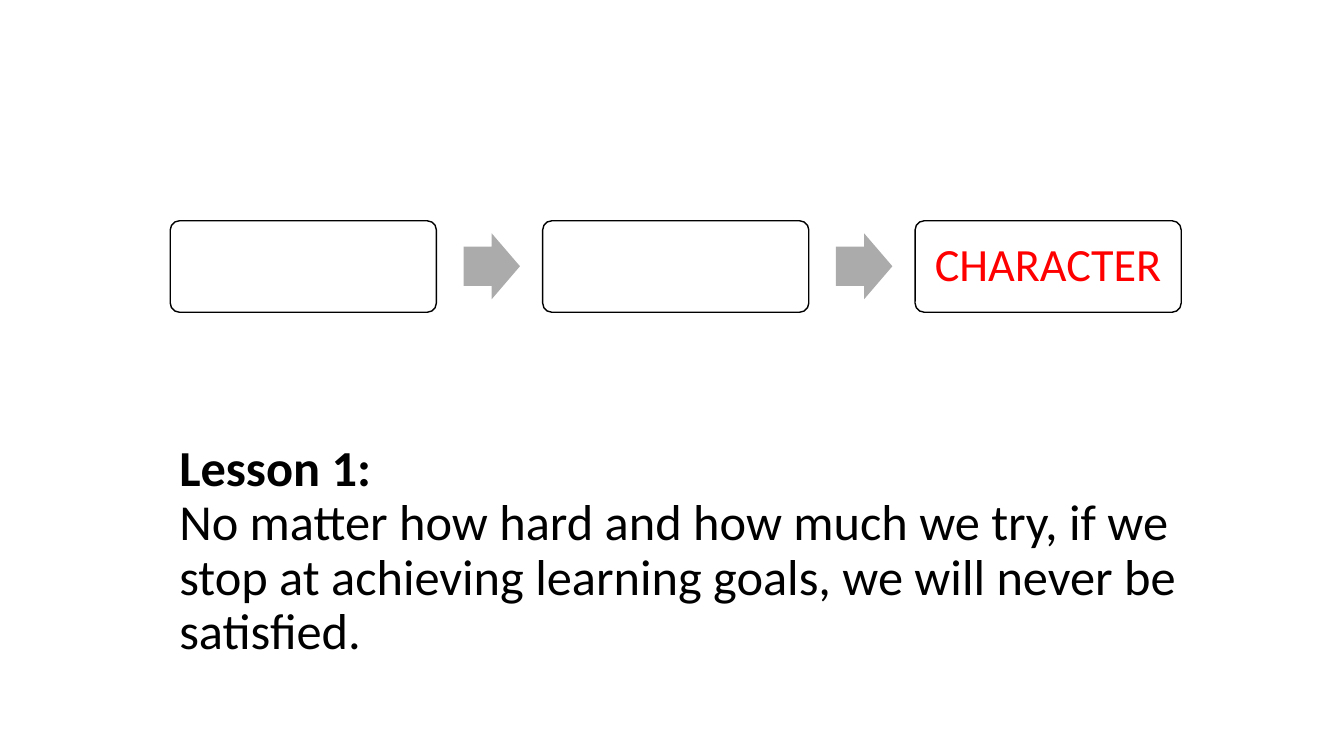
from pptx import Presentation
from pptx.dml.color import RGBColor
from pptx.enum.shapes import MSO_SHAPE
from pptx.enum.text import MSO_ANCHOR, PP_ALIGN
from pptx.util import Inches, Pt

BLACK = RGBColor(0x00, 0x00, 0x00)
WHITE = RGBColor(0xFF, 0xFF, 0xFF)
RED = RGBColor(0xFF, 0x00, 0x00)
GRAY = RGBColor(0xAB, 0xAB, 0xAB)


class LessonSlide:
    font_name = "Calibri"
    line_spacing = 0.9
    columns = 100
    rows = 100

    def __init__(self, presentation):
        self.slide = presentation.slides.add_slide(presentation.slide_layouts[6])
        self.column = presentation.slide_width / self.columns
        self.row = presentation.slide_height / self.rows

    def place(self, left, top, width, height):
        return (round(left * self.column), round(top * self.row),
                round(width * self.column), round(height * self.row))

    def set_text(self, shape, text, size, color, alignment):
        text_frame = shape.text_frame
        text_frame.word_wrap = True
        text_frame.vertical_anchor = MSO_ANCHOR.MIDDLE
        paragraph = text_frame.paragraphs[0]
        paragraph.text = text
        paragraph.alignment = alignment
        paragraph.line_spacing = self.line_spacing
        for run in paragraph.runs:
            run.font.name = self.font_name
            run.font.size = Pt(size)
            run.font.color.rgb = color
        return paragraph

    def shape(self, kind, area, fill, adjustments):
        shape = self.slide.shapes.add_shape(kind, *self.place(*area))
        shape.shadow.inherit = False
        shape.fill.solid()
        shape.fill.fore_color.rgb = fill
        for index, value in enumerate(adjustments):
            shape.adjustments[index] = value
        return shape

    def step(self, area, label):
        box = self.shape(MSO_SHAPE.ROUNDED_RECTANGLE, area, WHITE, [0.1])
        box.line.color.rgb = BLACK
        box.line.width = Pt(1)
        if label:
            self.set_text(box, label, 33, RED, PP_ALIGN.CENTER)

    def arrow(self, area):
        arrow = self.shape(MSO_SHAPE.RIGHT_ARROW, area, GRAY, [0.6, 0.5])
        arrow.line.fill.background()

    def lesson(self, area, heading, body):
        text_box = self.slide.shapes.add_textbox(*self.place(*area))
        paragraph = self.set_text(text_box, f"{heading}\v{body}", 36, BLACK, PP_ALIGN.LEFT)
        paragraph.runs[0].font.bold = True


def main():
    presentation = Presentation()
    presentation.slide_width = Inches(13.33)
    presentation.slide_height = Inches(7.5)
    lesson_slide = LessonSlide(presentation)

    lesson_slide.lesson(
        (12.6, 59.33, 79.5, 27.33),
        "Lesson 1:",
        "No matter how hard and how much we try, if we stop at achieving "
        "learning goals, we will never be satisfied.",
    )

    first_left, pitch, arrow_offset = 12.67, 27.71, 21.82
    steps = ["", "", "CHARACTER"]
    for index, label in enumerate(steps):
        left = first_left + index * pitch
        lesson_slide.step((left, 29.2, 19.8, 12.1), label)
        if index < len(steps) - 1:
            lesson_slide.arrow((left + arrow_offset, 30.87, 4.2, 8.7))

    presentation.save("out.pptx")


if __name__ == "__main__":
    main()
